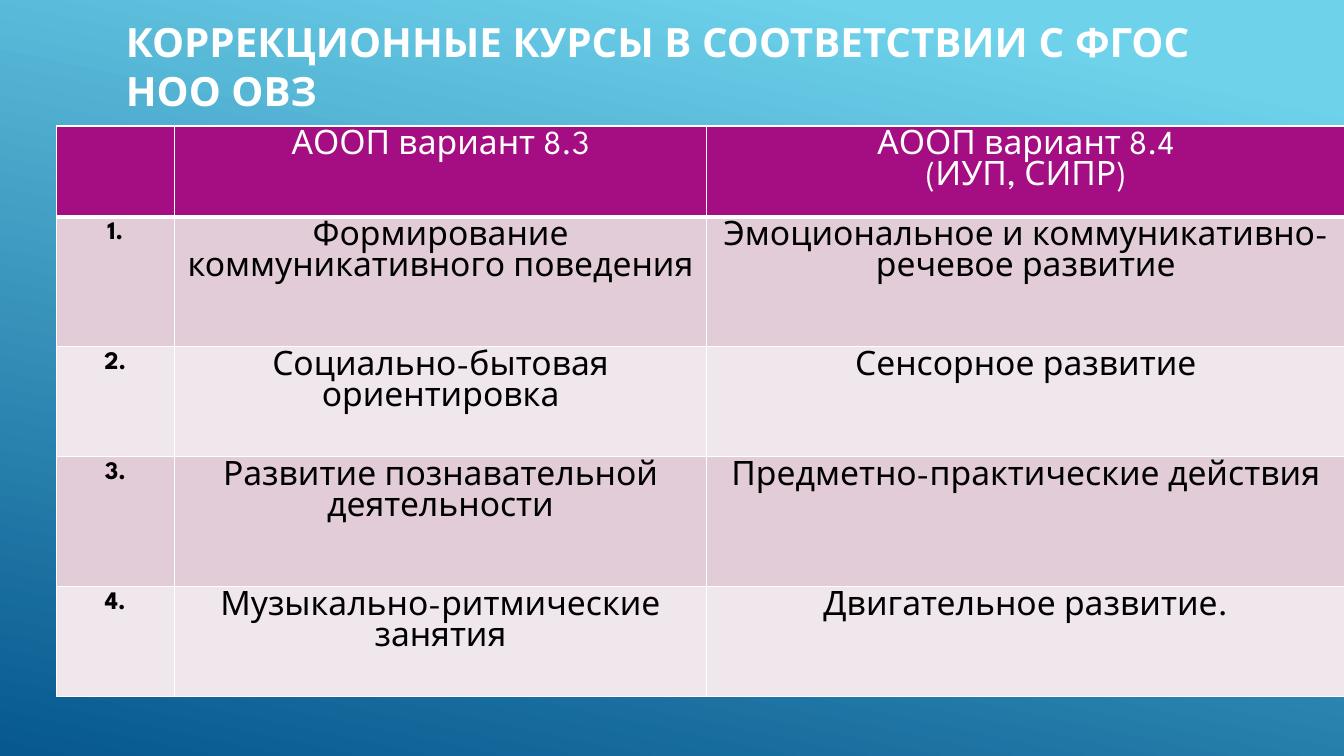
"""Build the slide that lists the remedial courses of two programme variants."""
from pptx import Presentation
from pptx.dml.color import RGBColor
from pptx.enum.shapes import MSO_CONNECTOR
from pptx.enum.text import MSO_ANCHOR, PP_ALIGN
from pptx.oxml.ns import qn
from pptx.util import Inches, Pt
from lxml import etree

TITLE = "КОРРЕКЦИОННЫЕ КУРСЫ В СООТВЕТСТВИИ С ФГОС НОО ОВЗ"
HEAD = ["", "АООП вариант 8.3", "АООП вариант 8.4\n(ИУП, СИПР)"]
ROWS = [
    ["Формирование коммуникативного поведения",
     "Эмоциональное и коммуникативно-речевое развитие"],
    ["Социально-бытовая ориентировка", "Сенсорное развитие"],
    ["Развитие познавательной деятельности", "Предметно-практические действия"],
    ["Музыкально-ритмические занятия", "Двигательное развитие."],
]
WIDTHS = [1.17, 5.28, 6.33]
HEIGHTS = [0.7, 1.29, 1.09, 1.29, 1.09]
RAYS = [(3.24, 12.33, 4.24, 0.75), (3.49, 10.07, 6.75, 0.75),
        (3.59, 11.26, 5.67, 0.75), (3.42, 11.42, 5.33, 2.25),
        (4.03, 11.94, 5.42, 2.25)]
COLORS = {"sky": "6ED2EB", "sea": "06588E", "white": "FFFFFF", "black": "000000",
          "head": "A50E82", "odd": "E1CCD8", "even": "F0E7ED"}
FONT = "League Spartan"
WIDE, HIGH = 13.33, 7.5
LEFT, MIDDLE = PP_ALIGN.LEFT, MSO_ANCHOR.MIDDLE
CENTER, STRAIGHT = PP_ALIGN.CENTER, MSO_CONNECTOR.STRAIGHT


def tint(name):
    return RGBColor.from_string(COLORS[name])


def write(frame, text, size=24, color="black", bold=False, align=CENTER, pitch=None):
    frame.word_wrap = True
    for i, line in enumerate(text.split("\n")):
        para = frame.add_paragraph() if i else frame.paragraphs[0]
        para.alignment = align
        if pitch:
            para.line_spacing = Pt(pitch)
        run = para.add_run()
        run.text = line
        run.font.name, run.font.size, run.font.bold = FONT, Pt(size), bold
        run.font.color.rgb = tint(color)


def edge(cell, base):
    props = cell._tc.get_or_add_tcPr()
    for side, width in (("L", 1), ("R", 1), ("T", 1), ("B", base)):
        line = etree.SubElement(props, qn(f"a:ln{side}"), w=str(Pt(width)))
        fill = etree.SubElement(line, qn("a:solidFill"))
        etree.SubElement(fill, qn("a:srgbClr"), val=COLORS["white"])


def paint(slide):
    fill = slide.background.fill
    fill.gradient()
    fill.gradient_angle = 258
    for stop, name, place in zip(fill.gradient_stops, ("sky", "sea"), (0.1, 1)):
        stop.color.rgb, stop.position = tint(name), place


def draw_rays(slide):
    for top, x, y, width in RAYS:
        ray = slide.shapes.add_connector(
            STRAIGHT, Inches(WIDE), Inches(top), Inches(x), Inches(y))
        ray.line.color.rgb, ray.line.width = tint("white"), Pt(width)
        etree.SubElement(ray._element.spPr, qn("a:effectLst"))


def draw_table(slide):
    data = [HEAD] + [[f"{i}.", *row] for i, row in enumerate(ROWS, 1)]
    table = slide.shapes.add_table(
        len(data), len(HEAD), Inches(0.56), Inches(1.25),
        Inches(sum(WIDTHS)), Inches(sum(HEIGHTS))).table
    for col, width in zip(table.columns, WIDTHS):
        col.width = Inches(width)
    for r, texts in enumerate(data):
        table.rows[r].height = Inches(HEIGHTS[r])
        shade = ("odd" if r % 2 else "even") if r else "head"
        for c, text in enumerate(texts):
            cell = table.cell(r, c)
            edge(cell, 1 if r else 3)
            cell.fill.solid()
            cell.fill.fore_color.rgb = tint(shade)
            cell.margin_left = cell.margin_right = Inches(0.13)
            cell.margin_top = cell.margin_bottom = Inches(0.05)
            if text:
                write(cell.text_frame, text, size=24 if c else 18,
                      color="black" if r else "white", bold=c == 0)


def main():
    deck = Presentation()
    deck.slide_width, deck.slide_height = Inches(WIDE), Inches(HIGH)
    slide = deck.slides.add_slide(deck.slide_layouts[6])
    paint(slide)
    draw_rays(slide)
    title = slide.shapes.add_textbox(
        Inches(1.15), Inches(0.16), Inches(11.33), Inches(0.98)).text_frame
    title.vertical_anchor = MIDDLE
    write(title, TITLE, size=28.8, color="white", bold=True, align=LEFT, pitch=35)
    draw_table(slide)
    deck.save("out.pptx")


if __name__ == "__main__":
    main()
